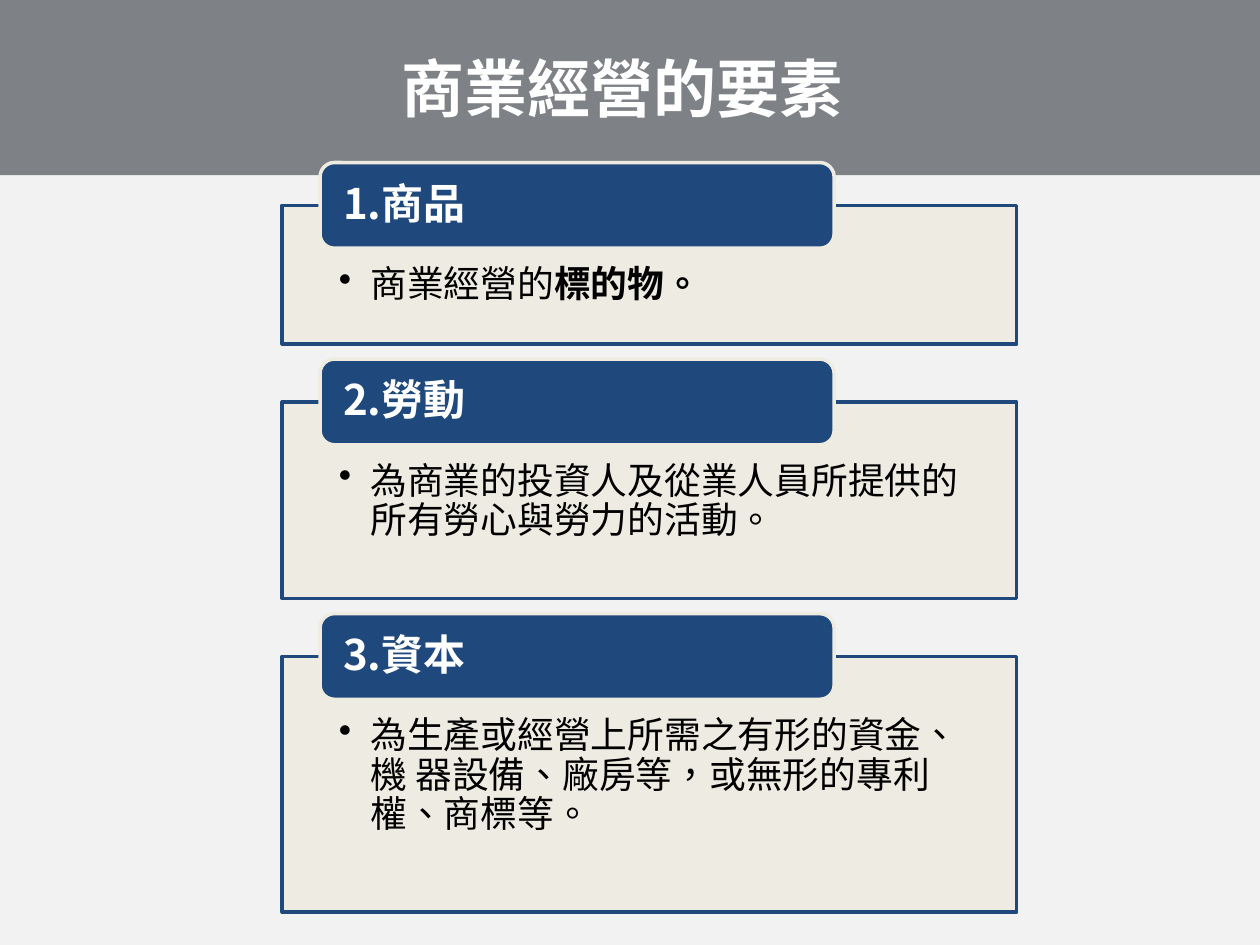
from lxml import etree
from pptx import Presentation
from pptx import util as u
from pptx.dml.color import RGBColor
from pptx.enum import shapes, text
from pptx.oxml.ns import qn

FONT = "Noto Sans CJK SC"
PAPER = RGBColor(0xF2, 0xF2, 0xF2)
DARK = RGBColor(0x0C, 0x14, 0x1C)
NAVY = RGBColor(0x1F, 0x49, 0x7D)
CREAM = RGBColor(0xEE, 0xEC, 0xE1)
WHITE = RGBColor(0xFF, 0xFF, 0xFF)
BLACK = RGBColor(0, 0, 0)

# top, height, heading, body runs as (words, bold)
CARDS = [
    (1.63, 1.10, "1.商品", [("商業經營的", False), ("標的物。", True)]),
    (3.19, 1.56, "2.勞動",
     [("為商業的投資人及從業人員所提供的所有勞心與勞力的活動。", False)]),
    (5.21, 2.03, "3.資本",
     [("為生產或經營上所需之有形的資金、機 器設備、廠房等，或無形的專利權、商標等。", False)]),
]


class Deck:
    def __init__(self):
        self.prs = Presentation()
        self.prs.slide_width, self.prs.slide_height = u.Inches(10), u.Inches(7.5)
        self.slide = self.prs.slides.add_slide(self.prs.slide_layouts[5])
        fill = self.slide.background.fill
        fill.solid()
        fill.fore_color.rgb = PAPER

    def place(self, shape, *box):
        shape.left, shape.top, shape.width, shape.height = map(u.Inches, box)

    def box(self, kind, box, fill, line=None, alpha=100):
        """Add a flat preset shape; alpha is its opacity in percent."""
        shape = self.slide.shapes.add_shape(kind, *map(u.Inches, box))
        shape.shadow.inherit = False
        shape.fill.solid()
        shape.fill.fore_color.rgb = fill
        if alpha < 100:
            tone = shape._element.spPr.find(qn("a:solidFill")).find(qn("a:srgbClr"))
            etree.SubElement(tone, qn("a:alpha"), val=str(alpha * 1000))
        if line is None:
            shape.line.fill.background()
        else:
            shape.line.color.rgb = line
            shape.line.width = u.Pt(2)
        return shape

    def frame(self, shape, anchor, *pads):
        """Set anchor and left, top, right, bottom margins."""
        tf = shape.text_frame
        tf.word_wrap = True
        tf.auto_size = text.MSO_AUTO_SIZE.NONE
        tf.vertical_anchor = anchor
        (tf.margin_left, tf.margin_top,
         tf.margin_right, tf.margin_bottom) = map(u.Inches, pads)
        return tf

    def label(self, tf, runs, size, color, align=text.PP_ALIGN.LEFT):
        par = tf.paragraphs[0]
        par.alignment = align
        par.line_spacing = 0.9
        for words, bold in runs:
            run = par.add_run()
            run.text = words
            font = run.font
            font.size, font.bold, font.name = u.Pt(size), bold, FONT
            font.color.rgb = color
            props = run._r.get_or_add_rPr()
            props.set("lang", "zh-TW")
            etree.SubElement(props, qn("a:ea"), typeface=FONT)
        return par

    def bullet(self, par):
        props = par._p.get_or_add_pPr()
        props.set("marL", str(u.Inches(0.25)))
        props.set("indent", str(u.Inches(-0.25)))
        etree.SubElement(props, qn("a:buChar"), char="•")

    def title(self, words):
        band = self.box(shapes.MSO_SHAPE.RECTANGLE, (0, -0.01, 10, 1.4), DARK, alpha=50)
        self.slide.shapes._spTree.insert(2, band._element)  # behind the title
        head = self.slide.shapes.title
        self.place(head, 0.51, 0.17, 8.86, 0.87)
        tf = self.frame(head, text.MSO_ANCHOR.BOTTOM, 0.08, 0.04, 0.08, 0.04)
        self.label(tf, [(words, True)], 36, WHITE, text.PP_ALIGN.CENTER)

    def card(self, top, height, name, runs):
        """Add a framed body with a heading tab over its top edge."""
        body = self.box(shapes.MSO_SHAPE.RECTANGLE, (2.24, top, 5.83, height),
                        CREAM, NAVY, 90)
        tf = self.frame(body, text.MSO_ANCHOR.TOP, 0.45, 0.48, 0.45, 0.16)
        self.bullet(self.label(tf, runs, 21, BLACK))
        tab = self.box(shapes.MSO_SHAPE.ROUNDED_RECTANGLE,
                       (2.54, top - 0.34, 4.08, 0.68), NAVY, CREAM)
        tf = self.frame(tab, text.MSO_ANCHOR.MIDDLE, 0.15, 0, 0.15, 0)
        self.label(tf, [(name, True)], 24, WHITE)


def main():
    deck = Deck()
    deck.title("商業經營的要素")
    for card in CARDS:
        deck.card(*card)
    deck.prs.save("out.pptx")


if __name__ == "__main__":
    main()
